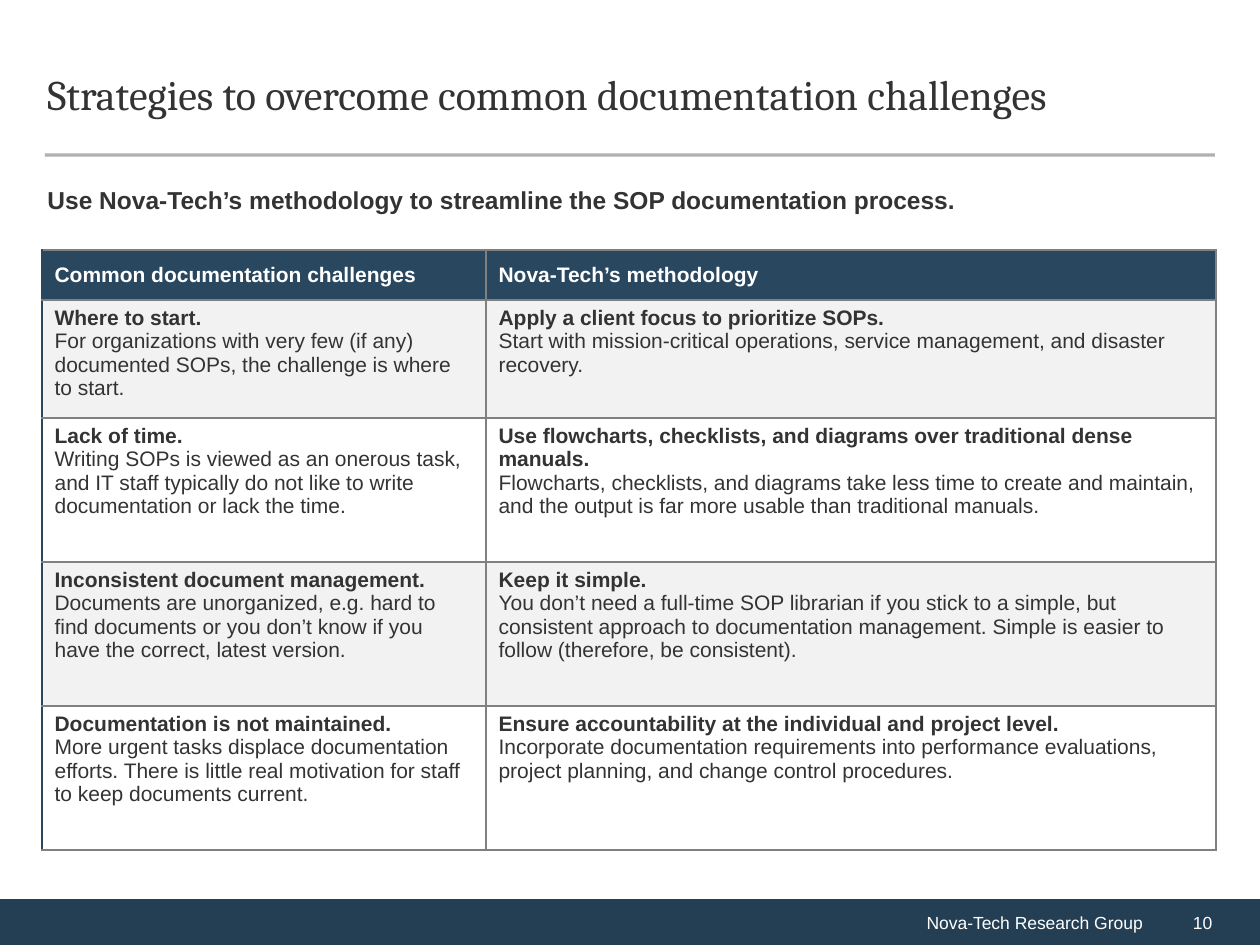
from lxml.etree import SubElement
from pptx import Presentation
from pptx.dml.color import RGBColor
from pptx.enum.shapes import MSO_CONNECTOR, MSO_SHAPE
from pptx.enum.text import MSO_ANCHOR, PP_ALIGN
from pptx.oxml.ns import qn
from pptx.util import Pt

EMU_PER_PX = 914400 / 126
NAVY = RGBColor(0x29, 0x47, 0x5F)
FOOTER_NAVY = RGBColor(0x24, 0x3F, 0x54)
INK = RGBColor(0x33, 0x33, 0x33)
RULE = RGBColor(0x45, 0x43, 0x3E)
GREY = RGBColor(0x80, 0x80, 0x80)
BAND = RGBColor(0xF2, 0xF2, 0xF2)
WHITE = RGBColor(0xFF, 0xFF, 0xFF)

HEADERS = ["Common documentation challenges", "Nova-Tech’s methodology"]
# Each row pairs a challenge with its remedy, each as (heading, detail)
ROWS = [
    (("Where to start.",
      "For organizations with very few (if any) documented SOPs, the challenge is where to start."),
     ("Apply a client focus to prioritize SOPs.",
      "Start with mission-critical operations, service management, and disaster recovery.")),
    (("Lack of time.",
      "Writing SOPs is viewed as an onerous task, and IT staff typically do not like to write "
      "documentation or lack the time."),
     ("Use flowcharts, checklists, and diagrams over traditional dense manuals.",
      "Flowcharts, checklists, and diagrams take less time to create and maintain, and the output "
      "is far more usable than traditional manuals.")),
    (("Inconsistent document management.",
      "Documents are unorganized, e.g. hard to find documents or you don’t know if you have the "
      "correct, latest version."),
     ("Keep it simple.",
      "You don’t need a full-time SOP librarian if you stick to a simple, but consistent approach "
      "to documentation management. Simple is easier to follow (therefore, be consistent).")),
    (("Documentation is not maintained.",
      "More urgent tasks displace documentation efforts. There is little real motivation for staff "
      "to keep documents current."),
     ("Ensure accountability at the individual and project level.",
      "Incorporate documentation requirements into performance evaluations, project planning, and "
      "change control procedures.")),
]
COLUMN_WIDTHS = [444, 730]
ROW_HEIGHTS = [50, 118, 144, 144, 144]


def px(length):
    return round(length * EMU_PER_PX)


def box(*lengths):
    return [px(length) for length in lengths]


def write(paragraph, text, size=12, font="Arial", color=INK, bold=False,
          align=PP_ALIGN.LEFT, line_spacing=None):
    run = paragraph.add_run()
    run.text = text
    run.font.size = Pt(size)
    run.font.name = font
    run.font.color.rgb = color
    run.font.bold = bold
    paragraph.alignment = align
    if line_spacing:
        paragraph.line_spacing = Pt(line_spacing)


def add_text(slide, bounds, text, anchor=MSO_ANCHOR.TOP, **text_format):
    frame = slide.shapes.add_textbox(*box(*bounds)).text_frame
    frame.word_wrap = True
    frame.vertical_anchor = anchor
    write(frame.paragraphs[0], text, **text_format)


def add_footer_block(slide, left, width, text, indent=13, **text_format):
    shape = slide.shapes.add_shape(MSO_SHAPE.RECTANGLE, *box(left, 899, width, 46))
    shape.shadow.inherit = False
    shape.fill.solid()
    shape.fill.fore_color.rgb = FOOTER_NAVY
    shape.line.fill.background()
    frame = shape.text_frame
    frame.margin_left = px(indent)
    frame.vertical_anchor = MSO_ANCHOR.MIDDLE
    write(frame.paragraphs[0], text, size=10, color=WHITE, **text_format)


def add_rule(slide, left, right, y):
    line = slide.shapes.add_connector(MSO_CONNECTOR.STRAIGHT, *box(left, y, right, y))
    line.line.color.rgb = RULE
    line.line.width = Pt(1.75)
    color = line.line._ln.find(".//" + qn("a:srgbClr"))
    SubElement(color, qn("a:alpha"), val="42000")
    SubElement(line._element.spPr, qn("a:effectLst"))


def set_borders(cell, left_color):
    properties = cell._tc.get_or_add_tcPr()
    sides = {"a:lnL": left_color, "a:lnR": GREY, "a:lnT": GREY, "a:lnB": GREY}
    for tag, color in sides.items():
        border = SubElement(properties, qn(tag), w=str(Pt(1)))
        fill = SubElement(border, qn("a:solidFill"))
        SubElement(fill, qn("a:srgbClr"), val=str(color))


def style_cell(cell, column, fill):
    set_borders(cell, GREY if column else NAVY)
    if fill is None:
        cell.fill.background()
    else:
        cell.fill.solid()
        cell.fill.fore_color.rgb = fill


def add_challenge_table(slide):
    table = slide.shapes.add_table(
        len(ROW_HEIGHTS), len(COLUMN_WIDTHS),
        *box(42, 250, sum(COLUMN_WIDTHS), sum(ROW_HEIGHTS))).table
    table.horz_banding = False
    for column, width in zip(table.columns, COLUMN_WIDTHS):
        column.width = px(width)
    for row, height in zip(table.rows, ROW_HEIGHTS):
        row.height = px(height)

    # Header row
    for column, header in enumerate(HEADERS):
        cell = table.cell(0, column)
        style_cell(cell, column, NAVY)
        cell.vertical_anchor = MSO_ANCHOR.MIDDLE
        write(cell.text_frame.paragraphs[0], header, color=WHITE, bold=True)

    # Body rows, every other one shaded
    for row, entries in enumerate(ROWS, start=1):
        for column, (heading, detail) in enumerate(entries):
            cell = table.cell(row, column)
            style_cell(cell, column, BAND if row % 2 else None)
            frame = cell.text_frame
            write(frame.paragraphs[0], heading, bold=True)
            write(frame.add_paragraph(), detail)


def main():
    presentation = Presentation()
    presentation.slide_width, presentation.slide_height = box(1260, 945)
    slide = presentation.slides.add_slide(presentation.slide_layouts[6])

    # Footer
    add_footer_block(slide, 0, 1155, "Nova-Tech Research Group", align=PP_ALIGN.RIGHT)
    add_footer_block(slide, 1155, 105, "10", indent=38)

    # Title and lead-in
    add_rule(slide, 45, 1215, 155)
    add_text(slide, (35, 37, 1188, 118), "Strategies to overcome common documentation challenges",
             anchor=MSO_ANCHOR.MIDDLE, size=24, font="Cambria", line_spacing=26)
    add_challenge_table(slide)
    add_text(slide, (35, 179, 1188, 43),
             "Use Nova-Tech’s methodology to streamline the SOP documentation process.",
             size=14, bold=True)

    presentation.save("out.pptx")


if __name__ == "__main__":
    main()
